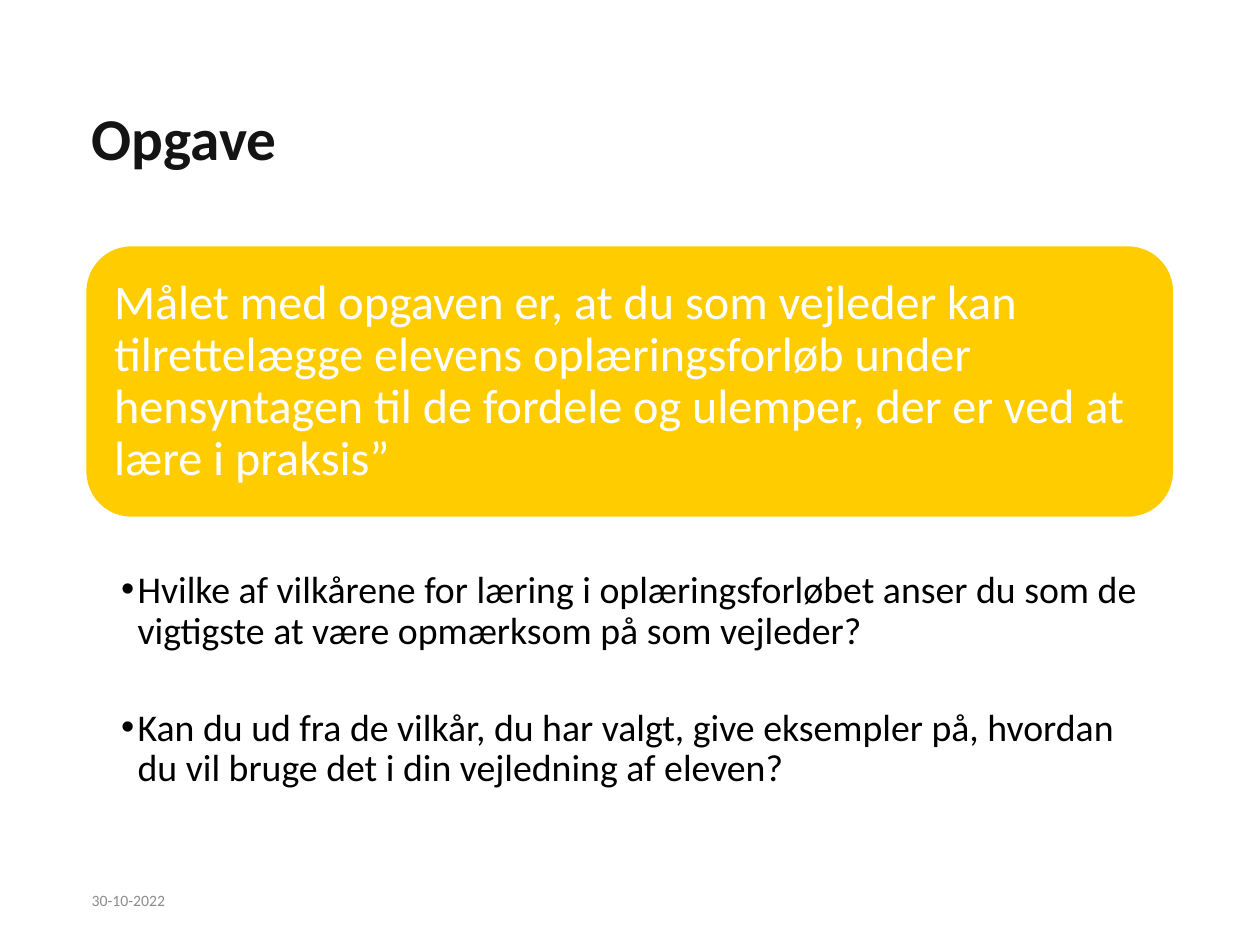
from pptx import Presentation
from pptx import util as u
from pptx.dml.color import RGBColor
from pptx.enum import shapes, text
from pptx.oxml.ns import qn
from lxml import etree

HUES = {"ink": "141414", "gold": "FFCC00", "white": "FFFFFF",
        "black": "000000", "gray": "8C8C8C"}
FACE = "Calibri"
WIDE, HIGH = 1700.64, 1275.84
LEFT, SPAN = 116.64, 1466.64

GOAL = ("Målet med opgaven er, at du som vejleder kan tilrettelægge elevens "
        "oplæringsforløb under hensyntagen til de fordele og ulemper, "
        "der er ved at lære i praksis”")
TASKS = [
    "Hvilke af vilkårene for læring i oplæringsforløbet anser du som de "
    "vigtigste at være opmærksom på som vejleder?",
    "Kan du ud fra de vilkår, du har valgt, give eksempler på, hvordan "
    "du vil bruge det i din vejledning af eleven?",
]


def put(item, values):
    for name, value in values.items():
        setattr(item, name, value)


def place(shape, box):
    put(shape, dict(zip(("left", "top", "width", "height"), map(u.Pt, box))))


def write(frame, lines, size, hue, bold=False, mid=True, pads=(7.2, 3.6, 7.2, 3.6), **form):
    """Fill a text frame with one paragraph per line."""
    anchor = text.MSO_ANCHOR.MIDDLE if mid else text.MSO_ANCHOR.TOP
    put(frame, {"word_wrap": True, "auto_size": text.MSO_AUTO_SIZE.NONE,
                "vertical_anchor": anchor})
    sides = ("margin_left", "margin_top", "margin_right", "margin_bottom")
    put(frame, dict(zip(sides, map(u.Pt, pads))))
    for i, line in enumerate(lines):
        para = frame.paragraphs[0] if i == 0 else frame.add_paragraph()
        put(para, {"alignment": text.PP_ALIGN.LEFT, **form})
        run = para.add_run()
        run.text = line
        put(run.font, {"name": FACE, "size": u.Pt(size), "bold": bold})
        run.font.color.rgb = RGBColor.from_string(HUES[hue])


def bullet(para, hang):
    props = para._p.get_or_add_pPr()
    props.set("marL", str(u.Pt(hang)))
    props.set("indent", str(-u.Pt(hang)))
    etree.SubElement(props, qn("a:buFont")).set("typeface", "Arial")
    etree.SubElement(props, qn("a:buChar")).set("char", "•")


def head(slide, box):
    title = slide.shapes.title
    place(title, box)
    write(title.text_frame, ["Opgave"], 80, "ink", bold=True, line_spacing=0.9)


def goal(slide, box):
    card = slide.shapes.add_shape(shapes.MSO_SHAPE.ROUNDED_RECTANGLE, *map(u.Pt, box))
    card.shadow.inherit = False
    card.fill.solid()
    card.fill.fore_color.rgb = RGBColor.from_string(HUES["gold"])
    card.line.fill.background()
    write(card.text_frame, [GOAL], 65, "white", pads=(19.5,) * 4, line_spacing=0.9)


def tasks(slide, box):
    area = slide.shapes.add_textbox(*map(u.Pt, box))
    write(area.text_frame, TASKS, 51, "black", mid=False,
          pads=(46.8, 6.5, 36.7, 6.5), line_spacing=0.9, space_after=u.Pt(76))
    for para in area.text_frame.paragraphs:
        bullet(para, 22.3)


def date(slide, box):
    area = slide.shapes.add_textbox(*map(u.Pt, box))
    write(area.text_frame, ["30-10-2022"], 21.3, "gray")


def main():
    deck = Presentation()
    put(deck, {"slide_width": u.Pt(WIDE), "slide_height": u.Pt(HIGH)})
    slide = deck.slides.add_slide(deck.slide_layouts[5])
    head(slide, (LEFT, 67.7, SPAN, 246.2))
    goal(slide, (LEFT, 332.6, SPAN, 365))
    tasks(slide, (LEFT, 764, SPAN, 326))
    date(slide, (LEFT, 1182.2, 382.3, 67.7))
    deck.save("out.pptx")


if __name__ == "__main__":
    main()
